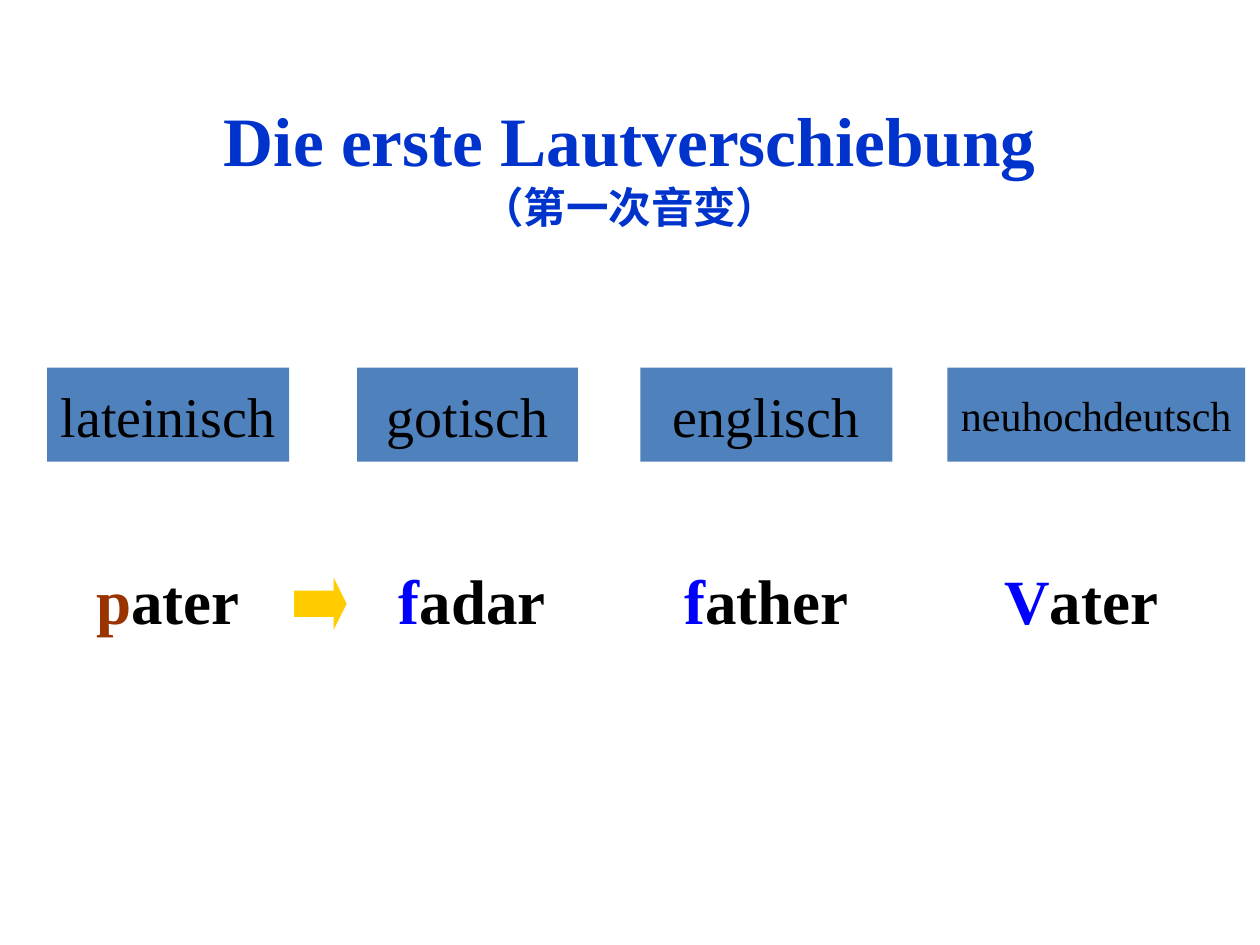
"""Build the slide on the first Germanic sound shift."""
import dataclasses

import pptx
import pptx.dml.color
import pptx.enum.shapes
import pptx.enum.text
import pptx.util

Cm = pptx.util.Cm


@dataclasses.dataclass(frozen=True)
class Theme:
    font: str = "Times New Roman"
    title: str = "0033CC"
    box: str = "4F81BD"
    arrow: str = "FFCC00"
    text: str = "000000"
    old: str = "993300"
    new: str = "0000FF"
    head: float = 39.6
    sub: float = 24.3
    label: float = 32
    small: float = 24
    word: float = 36


@dataclasses.dataclass(frozen=True)
class Stage:
    name: str
    size: float
    left: float
    width: float
    first: str
    rest: str
    tint: str
    start: float


THEME = Theme()
BOX_TOP, BOX_HIGH = 7.41, 1.9
WORD_TOP, WORD_WIDE, WORD_HIGH = 11.23, 3.38, 1.7
STAGES = (
    Stage("lateinisch", THEME.label, 0.95, 4.88, "p", "ater", THEME.old, 1.7),
    Stage("gotisch", THEME.label, 7.2, 4.45, "f", "adar", THEME.new, 7.83),
    Stage("englisch", THEME.label, 12.91, 5.08, "f", "ather", THEME.new, 13.76),
    Stage("neuhochdeutsch", THEME.small, 19.1, 6, "V", "ater", THEME.new, 20.11),
)


def color(code: str) -> pptx.dml.color.RGBColor:
    return pptx.dml.color.RGBColor.from_string(code)


def style(run, size: float, tint: str, bold: bool = True) -> None:
    run.font.name = THEME.font
    run.font.size = pptx.util.Pt(size)
    run.font.bold = bold
    run.font.color.rgb = color(tint)


def center(shape, wrap: bool = False):
    frame = shape.text_frame
    frame.word_wrap = wrap
    frame.auto_size = pptx.enum.text.MSO_AUTO_SIZE.NONE
    frame.vertical_anchor = pptx.enum.text.MSO_ANCHOR.MIDDLE
    line = frame.paragraphs[0]
    line.alignment = pptx.enum.text.PP_ALIGN.CENTER
    return line


def block(slide, kind, left: float, top: float, width: float, high: float, fill: str):
    shape = slide.shapes.add_shape(kind, Cm(left), Cm(top), Cm(width), Cm(high))
    shape.shadow.inherit = False
    shape.fill.solid()
    shape.fill.fore_color.rgb = color(fill)
    shape.line.fill.background()
    return shape


def title(slide) -> None:
    line = center(slide.shapes.add_textbox(Cm(1.27), Cm(1.73), Cm(22.86), Cm(3.18)), True)
    line.text = "Die erste Lautverschiebung\v（第一次音变）"
    for run, size in zip(line.runs, (THEME.head, THEME.sub)):
        style(run, size, THEME.title)


def label(slide, stage: Stage) -> None:
    kind = pptx.enum.shapes.MSO_SHAPE.RECTANGLE
    line = center(block(slide, kind, stage.left, BOX_TOP, stage.width, BOX_HIGH, THEME.box))
    line.text = stage.name
    style(line.runs[0], stage.size, THEME.text, False)


def word(slide, stage: Stage) -> None:
    line = center(slide.shapes.add_textbox(
        Cm(stage.start), Cm(WORD_TOP), Cm(WORD_WIDE), Cm(WORD_HIGH)))
    for text, tint in ((stage.first, stage.tint), (stage.rest, THEME.text)):
        run = line.add_run()
        run.text = text
        style(run, THEME.word, tint)


def arrow(slide) -> None:
    kind = pptx.enum.shapes.MSO_SHAPE.RIGHT_ARROW
    shape = block(slide, kind, 5.93, 11.64, 1.06, 1.06, THEME.arrow)
    shape.adjustments[0] = 0.5
    shape.adjustments[1] = 0.25


def main() -> None:
    deck = pptx.Presentation()
    deck.slide_width, deck.slide_height = Cm(25.4), Cm(19.05)
    slide = deck.slides.add_slide(deck.slide_layouts[6])
    title(slide)
    for stage in STAGES:
        label(slide, stage)
        word(slide, stage)
    arrow(slide)
    deck.save("out.pptx")


if __name__ == "__main__":
    main()
